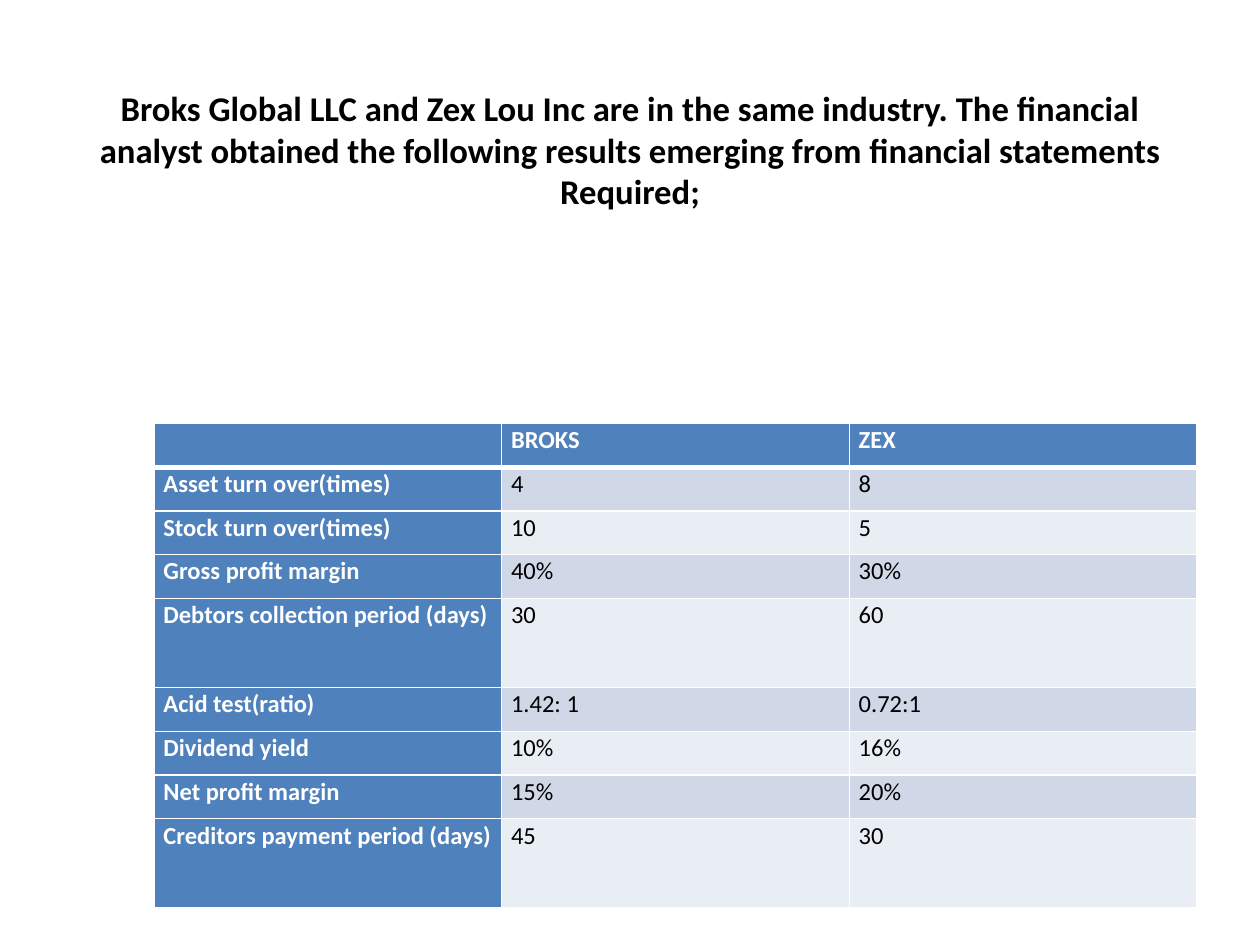
import pptx
import pptx.dml.color
import pptx.enum.text
import pptx.oxml.ns
import pptx.util
from lxml import etree

Pt = pptx.util.Pt
RGB = pptx.dml.color.RGBColor
WHITE = RGB(0xFF, 0xFF, 0xFF)
BLACK = RGB(0, 0, 0)
BLUE = RGB(0x4F, 0x81, 0xBD)
BANDS = RGB(0xD0, 0xD8, 0xE8), RGB(0xE9, 0xED, 0xF4)

TITLE = (
    "Broks Global LLC and Zex Lou Inc are in the same industry. "
    "The financial analyst obtained the following results emerging "
    "from financial statements\vRequired;"
)
ROWS = [
    ("", "BROKS", "ZEX"),
    ("Asset turn over(times)", "4", "8"),
    ("Stock turn over(times)", "10", "5"),
    ("Gross profit margin", "40%", "30%"),
    ("Debtors collection period (days)", "30", "60"),
    ("Acid test(ratio)", "1.42: 1", "0.72:1"),
    ("Dividend yield", "10%", "16%"),
    ("Net profit margin", "15%", "20%"),
    ("Creditors payment period (days)", "45", "30"),
]
LOW, TALL = 25, 51


class Deck:
    face = "Calibri"

    def __init__(self, wide, high):
        self.prs = pptx.Presentation()
        self.prs.slide_width, self.prs.slide_height = Pt(wide), Pt(high)
        self.slide = self.prs.slides.add_slide(self.prs.slide_layouts[5])

    def style(self, para, size, color, bold):
        font = para.font
        font.name, font.size, font.bold = self.face, Pt(size), bold
        font.color.rgb = color

    def title(self, text, left, top, wide, high):
        box = self.slide.shapes.title
        box.left, box.top, box.width, box.height = map(Pt, (left, top, wide, high))
        frame = box.text_frame
        frame.text = text
        frame.word_wrap = True
        frame.auto_size = pptx.enum.text.MSO_AUTO_SIZE.NONE
        frame.vertical_anchor = pptx.enum.text.MSO_ANCHOR.TOP
        frame.margin_top, frame.margin_bottom = Pt(28), 0
        para = frame.paragraphs[0]
        para.alignment = pptx.enum.text.PP_ALIGN.CENTER
        self.style(para, 19.8, BLACK, True)

    def edge(self, cell, side, width):
        line = etree.SubElement(
            cell._tc.get_or_add_tcPr(), pptx.oxml.ns.qn("a:ln" + side), w=str(Pt(width))
        )
        fill = etree.SubElement(line, pptx.oxml.ns.qn("a:solidFill"))
        etree.SubElement(fill, pptx.oxml.ns.qn("a:srgbClr"), val=str(WHITE))

    def cell(self, cell, text, row, col):
        # A thick rule parts the header from the body.
        widths = {"L": 1, "R": 1, "T": 3 if row == 1 else 1, "B": 3 if row == 0 else 1}
        for side, width in widths.items():
            self.edge(cell, side, width)
        head = row == 0 or col == 0
        cell.fill.solid()
        cell.fill.fore_color.rgb = BLUE if head else BANDS[(row - 1) % 2]
        cell.margin_left = cell.margin_right = Pt(5.4)
        cell.margin_top = cell.margin_bottom = 0
        cell.text = text
        para = cell.text_frame.paragraphs[0]
        para.line_spacing = 1.07
        self.style(para, 14, WHITE if head else BLACK, head)

    def table(self, rows, left, top, wide):
        highs = [TALL if "period" in row[0] else LOW for row in rows]
        count = len(rows[0])
        grid = self.slide.shapes.add_table(
            len(rows), count, Pt(left), Pt(top), Pt(wide), Pt(sum(highs))
        ).table
        grid.first_col = True
        for col in grid.columns:
            col.width = Pt(wide / count)
        for r, row in enumerate(rows):
            grid.rows[r].height = Pt(highs[r])
            for c, text in enumerate(row):
                self.cell(grid.cell(r, c), text, r, c)


def main():
    deck = Deck(720, 540)
    deck.title(TITLE, 36, 21.6, 648, 90)
    deck.table(ROWS, 88, 242, 596)
    deck.prs.save("out.pptx")


if __name__ == "__main__":
    main()
